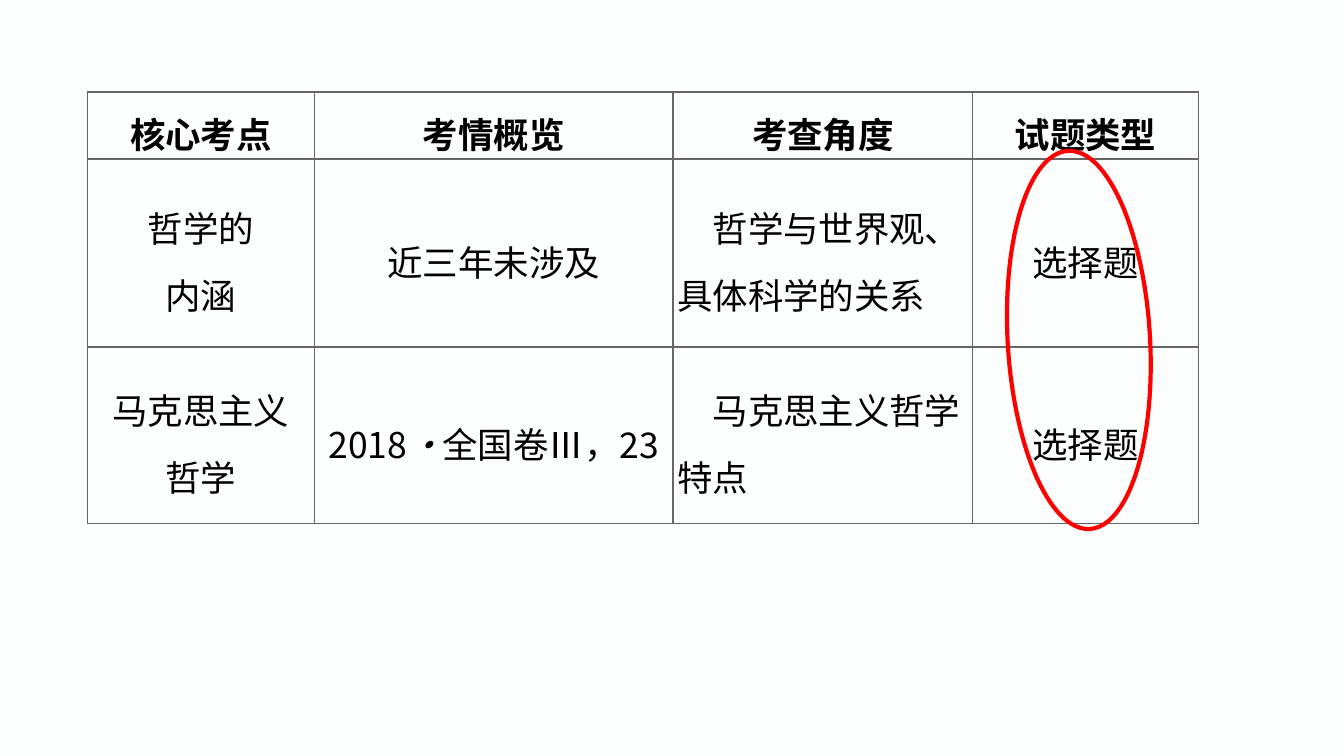
from dataclasses import dataclass

from lxml.etree import SubElement
from pptx import Presentation
from pptx.dml.color import RGBColor
from pptx.enum.shapes import MSO_SHAPE
from pptx.enum.text import MSO_ANCHOR, PP_ALIGN
from pptx.oxml.ns import qn
from pptx.util import Cm, Pt


@dataclass(frozen=True)
class Theme:
    font: str = "Noto Sans CJK SC"
    size: int = 19
    spacing: float = 1.3
    background: str = "FCFDFD"
    text: str = "000000"
    border: str = "666666"
    border_width: float = 1
    ring: str = "FF0000"
    ring_width: float = 2.25


THEME = Theme()
COL_WIDTHS = [4.29, 6.78, 5.66, 4.27]
ROW_HEIGHTS = [1.09, 3.56, 3.33]
ANGLE_COL = 2  # the only left-aligned column
ITALIC = "·"

# A cell is a list of paragraphs, a paragraph a list of runs.
ROWS = [
    [[["核心考点"]], [["考情概览"]], [["考查角度"]], [["试题类型"]]],
    [[["哲学的"], ["内涵"]], [["近三年未涉及"]],
     [["哲学与世界观、具体科学的关系"]], [["选择题"]]],
    [[["马克思主义"], ["哲学"]], [["2018", ITALIC, "全国卷Ⅲ，23"]],
     [["马克思主义哲学特点"]], [["选择题"]]],
]


def set_borders(cell):
    tc_pr = cell._tc.get_or_add_tcPr()
    for side in ("lnL", "lnR", "lnT", "lnB"):
        ln = SubElement(tc_pr, qn(f"a:{side}"), w=str(Pt(THEME.border_width)))
        fill = SubElement(ln, qn("a:solidFill"))
        SubElement(fill, qn("a:srgbClr"), val=THEME.border)


def write_paragraph(p, runs, bold, indented):
    for text in runs:
        r = p.add_run()
        r.text = text
        if text == ITALIC:
            r.font.italic = True
    p.line_spacing = THEME.spacing
    p.alignment = PP_ALIGN.LEFT if indented else PP_ALIGN.CENTER
    if indented:  # one character wide
        p._p.get_or_add_pPr().set("indent", str(Pt(THEME.size)))
    font = p.font
    font.name, font.size, font.bold = THEME.font, Pt(THEME.size), bold
    font.color.rgb = RGBColor.from_string(THEME.text)
    SubElement(font._element, qn("a:ea"), typeface=THEME.font)


def write_cell(cell, paragraphs, is_header, indented):
    set_borders(cell)
    cell.fill.background()
    cell.vertical_anchor = MSO_ANCHOR.MIDDLE
    cell.margin_top = cell.margin_bottom = 0
    cell.margin_left = cell.margin_right = Cm(0.08 if indented else 0)
    tf = cell.text_frame
    for i, runs in enumerate(paragraphs):
        p = tf.add_paragraph() if i else tf.paragraphs[0]
        write_paragraph(p, runs, is_header, indented)


def add_exam_table(slide, left, top, width, height):
    table = slide.shapes.add_table(len(ROWS), len(COL_WIDTHS),
                                   left, top, width, height).table
    table.first_row = table.horz_banding = False
    for col, share in zip(table.columns, COL_WIDTHS):
        col.width = int(width * share / sum(COL_WIDTHS))
    for row, share in zip(table.rows, ROW_HEIGHTS):
        row.height = int(height * share / sum(ROW_HEIGHTS))
    for i, cells in enumerate(ROWS):
        for j, paragraphs in enumerate(cells):
            write_cell(table.cell(i, j), paragraphs, i == 0,
                       i > 0 and j == ANGLE_COL)


def add_ring(slide, left, top, width, height):
    sp = slide.shapes.add_shape(MSO_SHAPE.OVAL, left, top, width, height)
    sp.rotation = 266.7
    sp.shadow.inherit = False
    sp.fill.background()
    sp.line.color.rgb = RGBColor.from_string(THEME.ring)
    sp.line.width = Pt(THEME.ring_width)


def main():
    prs = Presentation()
    prs.slide_width, prs.slide_height = Cm(25.4), Cm(14.29)
    slide = prs.slides.add_slide(prs.slide_layouts[6])
    fill = slide.background.fill
    fill.solid()
    fill.fore_color.rgb = RGBColor.from_string(THEME.background)
    add_exam_table(slide, Cm(1.65), Cm(1.74), Cm(21), Cm(7.98))
    add_ring(slide, Cm(16.81), Cm(5.08), Cm(7.16), Cm(2.69))
    prs.save("out.pptx")


if __name__ == "__main__":
    main()
